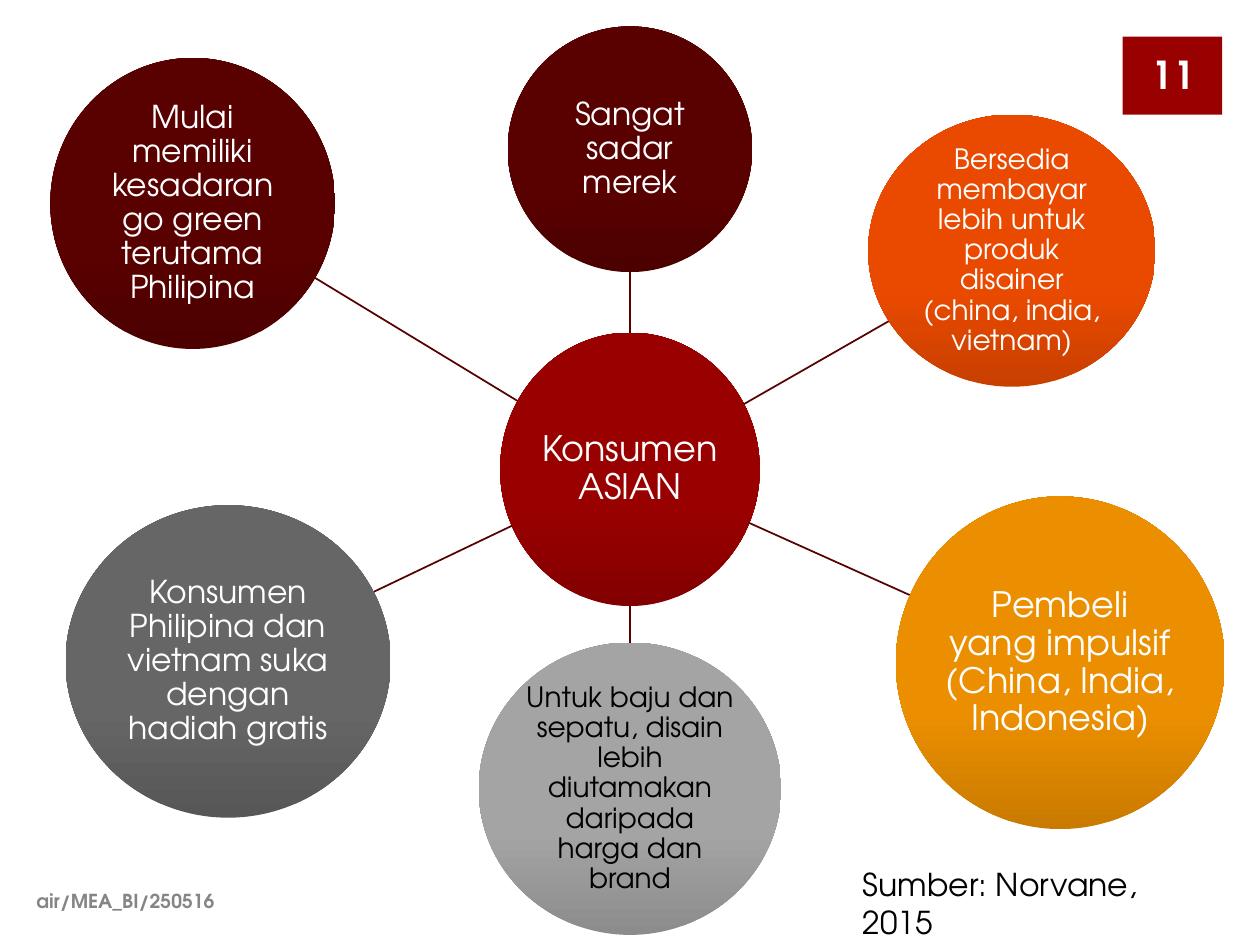
from copy import deepcopy
from math import hypot

from lxml import etree
from pptx import Presentation
from pptx.dml.color import RGBColor
from pptx.enum.shapes import MSO_CONNECTOR, MSO_SHAPE
from pptx.enum.text import MSO_ANCHOR, PP_ALIGN
from pptx.oxml.ns import qn
from pptx.util import Inches, Pt

OVAL, RECTANGLE = MSO_SHAPE.OVAL, MSO_SHAPE.RECTANGLE
STRAIGHT = MSO_CONNECTOR.STRAIGHT
MIDDLE, TOP = MSO_ANCHOR.MIDDLE, MSO_ANCHOR.TOP
LEFT, CENTER, RIGHT = PP_ALIGN.LEFT, PP_ALIGN.CENTER, PP_ALIGN.RIGHT

# text, (left, top, width, height), edge colour, main colour, text size, text colour
HUB = ("Konsumen ASIAN", (3.97, 2.64, 2.06, 2.17), "830000", "990000", 20, "FFFFFF")
TRAITS = [
    ("Sangat sadar merek", (4.03, 0.21, 1.94, 1.95),
     "4C0000", "590000", 18, "FFFFFF"),
    ("Bersedia membayar lebih untuk produk disainer (china, india, vietnam)",
     (6.89, 0.91, 2.28, 2.16), "C83F00", "E94A00", 16, "FFFFFF"),
    ("Pembeli yang impulsif (China, India, Indonesia)",
     (7.11, 3.94, 2.61, 2.64), "C97A00", "EB8F00", 20, "FFFFFF"),
    ("Untuk baju dan sepatu, disain lebih diutamakan daripada harga dan brand",
     (3.8, 5.1, 2.4, 2.32), "8C8C8C", "A4A4A4", 16, "000000"),
    ("Konsumen Philipina dan vietnam suka dengan hadiah gratis",
     (0.52, 4.01, 2.58, 2.48), "575757", "666666", 18, "FFFFFF"),
    ("Mulai memiliki kesadaran go green terutama Philipina",
     (0.4, 0.46, 2.26, 2.31), "4C0000", "590000", 18, "FFFFFF"),
]


def rgb(value):
    return RGBColor.from_string(value)


def center(box):
    left, top, width, height = box
    return left + width / 2, top + height / 2


def rim_point(box, target):
    """Point where the oval in box meets the line from its centre to target."""
    x, y = center(box)
    dx, dy = target[0] - x, target[1] - y
    reach = 1 / hypot(dx / (box[2] / 2), dy / (box[3] / 2))
    return x + dx * reach, y + dy * reach


class SlideBuilder:
    font = "TeX Gyre Adventor"
    spoke_color = "580101"

    def __init__(self, slide):
        self.slide = slide

    def add_text(self, frame, text, size, color, align=LEFT, bold=False, spacing=1.0):
        paragraph = frame.paragraphs[0]
        paragraph.alignment = align
        paragraph.line_spacing = spacing
        run = paragraph.add_run()
        run.text = text
        style = {"name": self.font, "size": Pt(size), "bold": bold}
        for attribute, value in style.items():
            setattr(run.font, attribute, value)
        run.font.color.rgb = rgb(color)

    def shape(self, kind, box):
        shape = self.slide.shapes.add_shape(kind, *map(Inches, box))
        shape.shadow.inherit = False
        shape.line.fill.background()
        return shape

    def block(self, box, color):
        block = self.shape(RECTANGLE, box)
        block.fill.solid()
        block.fill.fore_color.rgb = rgb(color)

    def circle(self, text, box, edge, main, size, color):
        circle = self.shape(OVAL, box)
        self.shade(circle, edge, main)
        frame = circle.text_frame
        frame.word_wrap = True
        frame.vertical_anchor = MIDDLE
        for side in ("left", "top", "right", "bottom"):
            setattr(frame, f"margin_{side}", Inches(0.01))
        self.add_text(frame, text, size, color, CENTER, spacing=0.9)

    def shade(self, circle, edge, main):
        """Fade from edge at the bottom to main, which stays flat from 35 % up."""
        fill = circle.fill
        fill.gradient()
        fill.gradient_angle = 90
        for stop, color, position in zip(fill.gradient_stops, (edge, main), (0, 0.35)):
            stop.color.rgb = rgb(color)
            stop.position = position
        stops = circle.element.spPr.find(qn("a:gradFill")).find(qn("a:gsLst"))
        top_stop = deepcopy(stops[-1])
        top_stop.set("pos", "100000")
        stops.append(top_stop)

    def spoke(self, hub_box, trait_box):
        start = rim_point(hub_box, center(trait_box))
        end = rim_point(trait_box, center(hub_box))
        spoke = self.slide.shapes.add_connector(STRAIGHT, *map(Inches, start + end))
        spoke.line.color.rgb = rgb(self.spoke_color)
        spoke.line.width = Pt(1)
        etree.SubElement(spoke.element.spPr, qn("a:effectLst"))

    def label(self, text, box, size, color, align=LEFT, bold=False,
              anchor=MIDDLE, wrap=True):
        frame = self.slide.shapes.add_textbox(*map(Inches, box)).text_frame
        frame.word_wrap = wrap
        frame.vertical_anchor = anchor
        self.add_text(frame, text, size, color, align, bold)


def main():
    deck = Presentation()
    deck.slide_width, deck.slide_height = Inches(10), Inches(7.5)
    builder = SlideBuilder(deck.slides.add_slide(deck.slide_layouts[6]))

    builder.block((8.91, 0.29, 0.79, 0.62), "990000")
    builder.label("air/MEA_BI/250516", (0.19, 6.95, 6.57, 0.4), 11, "858585", bold=True)
    builder.label("11", (9.03, 0.39, 0.55, 0.4), 22, "FFFFFF", RIGHT, bold=True)

    builder.circle(*HUB)
    for trait in TRAITS:
        builder.spoke(HUB[1], trait[1])
        builder.circle(*trait)

    builder.label("Sumber: Norvane, 2015", (6.75, 6.82, 2.84, 0.4), 18, "000000",
                  anchor=TOP, wrap=False)
    deck.save("out.pptx")


if __name__ == "__main__":
    main()
